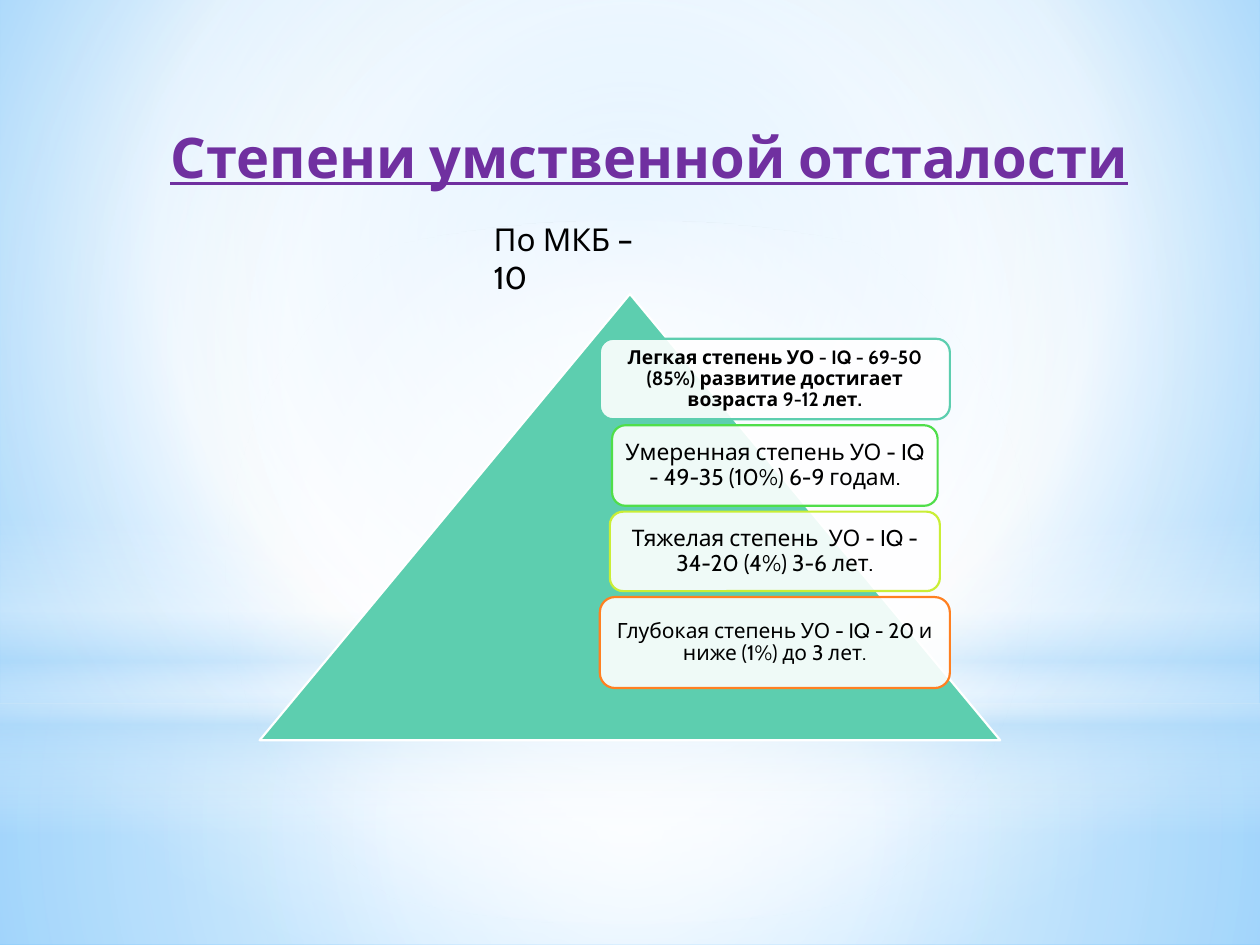
import pptx
import pptx.util
import pptx.dml.color
import pptx.enum.shapes
import pptx.enum.text
import pptx.oxml
import pptx.oxml.ns

Pt = pptx.util.Pt
MSO_SHAPE = pptx.enum.shapes.MSO_SHAPE
ALIGN = pptx.enum.text.PP_ALIGN

THEME = {
    "font": "Cabin",
    "title": {"size": 32, "color": "7030A0", "bold": True, "underline": True},
    "label": {"size": 18, "color": "000000"},
    "card_text": "000000",
    "card_fill": ("FFFFFF", 90),
    "pyramid": "5DCEAF",
    "pyramid_line": "FFFFFF",
    "line": 1.25,
}

TITLE = "Степени умственной отсталости"
CLASSIFICATION = "По МКБ – 10"

# text, type size, bold, outline, width, height
DEGREES = [
    ("Легкая степень УО - IQ - 69-50 (85%) развитие достигает возраста 9-12 лет.",
     11, True, "5DCEAF", 200, 46),
    ("Умеренная степень УО - IQ - 49-35 (10%) 6-9 годам.",
     13, False, "50DE4A", 186, 46),
    ("Тяжелая степень  УО - IQ - 34-20 (4%) 3-6 лет.",
     13, False, "CAEE36", 188.6, 45.4),
    ("Глубокая степень УО - IQ - 20 и ниже (1%) до 3 лет.",
     12, False, "FF8021", 200, 52),
]
CARD_CENTER, CARD_TOP, CARD_GAP, CARD_INSET = 442.8, 193.6, 3.4, 3.6

# Gradient stops: position %, colour, opacity %
CENTER = (50, 50, 50, 50)
SKY = [(0, "9ED5FF", 100), (60, "FFFFFF", 100), (100, "5BB9FF", 100)]
SKY_FOCUS = (20, 10, 20, 60)
BACKDROP = [
    (MSO_SHAPE.RECTANGLE, (0, 401.8, 720, 138.2), CENTER,
     [(0, "FFFFFF", 91), (37, "FFFFFF", 76), (100, "B4DCFA", 79)]),
    (MSO_SHAPE.RECTANGLE, (0, 0, 720, 401.8), CENTER,
     [(0, "FFFFFF", 89), (48, "FFFFFF", 62), (100, "B4DCFA", 79)]),
    (MSO_SHAPE.RECTANGLE, (0, 296.6, 720, 180), None,
     [(0, "FFFFFF", 0), (29, "FFFFFF", 30), (45, "B4DCFA", 40),
      (55, "FFFFFF", 26), (65, "B4DCFA", 60), (100, "FFFFFF", 0)]),
    (MSO_SHAPE.OVAL, (0, 126, 720, 401.8), CENTER,
     [(0, "FFFFFF", 100), (56, "FFFFFF", 0)]),
]


def rgb(color):
    return pptx.dml.color.RGBColor.from_string(color)


def color_xml(color, opacity):
    return f'<a:srgbClr val="{color}"><a:alpha val="{opacity * 1000}"/></a:srgbClr>'


def set_gradient(fill, element, stops, focus):
    """Circular gradient around focus (left, top, right, bottom %), or downward if None."""
    fill.gradient()
    stop_xml = "".join(f'<a:gs pos="{pos * 1000}">{color_xml(color, opacity)}</a:gs>'
                       for pos, color, opacity in stops)
    if focus:
        sides = " ".join(f'{side}="{value * 1000}"' for side, value in zip("ltrb", focus))
        course = f'<a:path path="circle"><a:fillToRect {sides}/></a:path>'
    else:
        course = '<a:lin ang="5400000" scaled="0"/>'
    gradient = pptx.oxml.parse_xml(
        f'<a:gradFill {pptx.oxml.ns.nsdecls("a")} rotWithShape="1">'
        f'<a:gsLst>{stop_xml}</a:gsLst>{course}</a:gradFill>')
    previous = next(element.iter(pptx.oxml.ns.qn("a:gradFill")))
    previous.getparent().replace(previous, gradient)


def add_shape(slide, kind, box, line=None):
    shape = slide.shapes.add_shape(kind, *map(Pt, box))
    shape.shadow.inherit = False
    if line:
        shape.line.color.rgb = rgb(line)
        shape.line.width = Pt(THEME["line"])
    else:
        shape.line.fill.background()
    return shape


def write(frame, text, style, align):
    frame.word_wrap = True
    paragraph = frame.paragraphs[0]
    paragraph.alignment = align
    run = paragraph.add_run()
    run.text = text
    run.font.color.rgb = rgb(style["color"])
    formats = {"name": THEME["font"], "size": Pt(style["size"]),
               "bold": style.get("bold", False), "underline": style.get("underline", False)}
    for name, value in formats.items():
        setattr(run.font, name, value)


def add_text(slide, box, text, style, align):
    frame = slide.shapes.add_textbox(*map(Pt, box)).text_frame
    write(frame, text, style, align)
    frame.auto_size = pptx.enum.text.MSO_AUTO_SIZE.SHAPE_TO_FIT_TEXT


def add_card(slide, box, text, style, outline):
    card = add_shape(slide, MSO_SHAPE.ROUNDED_RECTANGLE, box, outline)
    color, opacity = THEME["card_fill"]
    card.fill.solid()
    card.fill.fore_color.rgb = rgb(color)
    fill_color = next(card.element.spPr.iter(pptx.oxml.ns.qn("a:srgbClr")))
    fill_color.append(pptx.oxml.parse_xml(
        f'<a:alpha {pptx.oxml.ns.nsdecls("a")} val="{opacity * 1000}"/>'))
    frame = card.text_frame
    for side in ("left", "top", "right", "bottom"):
        setattr(frame, f"margin_{side}", Pt(CARD_INSET))
    frame.vertical_anchor = pptx.enum.text.MSO_ANCHOR.MIDDLE
    write(frame, text, style, ALIGN.CENTER)
    frame.paragraphs[0].line_spacing = 0.9


def main():
    deck = pptx.Presentation()
    deck.slide_width, deck.slide_height = Pt(720), Pt(540)
    slide = deck.slides.add_slide(deck.slide_layouts[6])

    set_gradient(slide.background.fill, slide.element, SKY, SKY_FOCUS)
    for kind, box, focus, stops in BACKDROP:
        glow = add_shape(slide, kind, box)
        set_gradient(glow.fill, glow.element, stops, focus)

    add_text(slide, (82, 66.2, 578, 46), TITLE, THEME["title"], ALIGN.CENTER)

    pyramid = add_shape(slide, MSO_SHAPE.ISOSCELES_TRIANGLE, (148.4, 168, 423.2, 255),
                        THEME["pyramid_line"])
    pyramid.fill.solid()
    pyramid.fill.fore_color.rgb = rgb(THEME["pyramid"])

    top = CARD_TOP
    for text, size, bold, outline, width, height in DEGREES:
        style = {"size": size, "bold": bold, "color": THEME["card_text"]}
        add_card(slide, (CARD_CENTER - width / 2, top, width, height), text, style, outline)
        top += height + CARD_GAP

    add_text(slide, (275, 122.4, 111, 29), CLASSIFICATION, THEME["label"], ALIGN.LEFT)
    deck.save("out.pptx")


if __name__ == "__main__":
    main()
